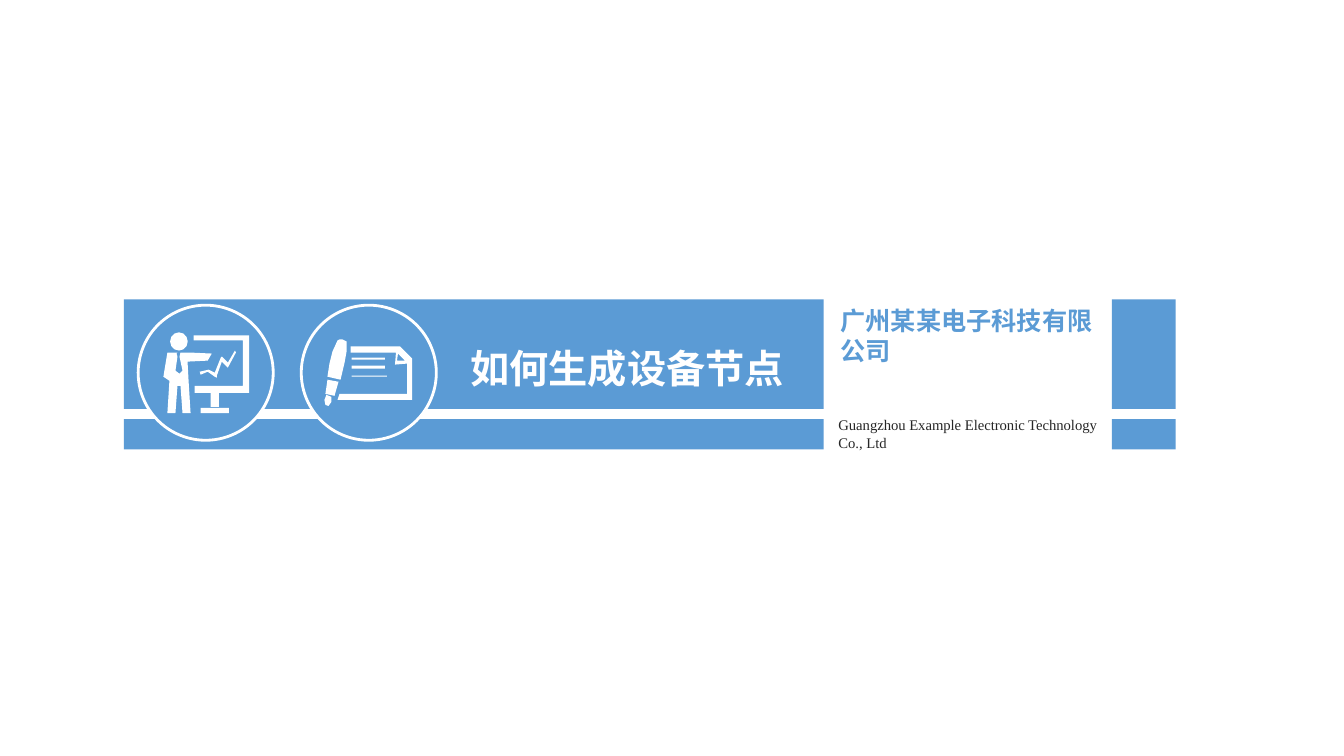
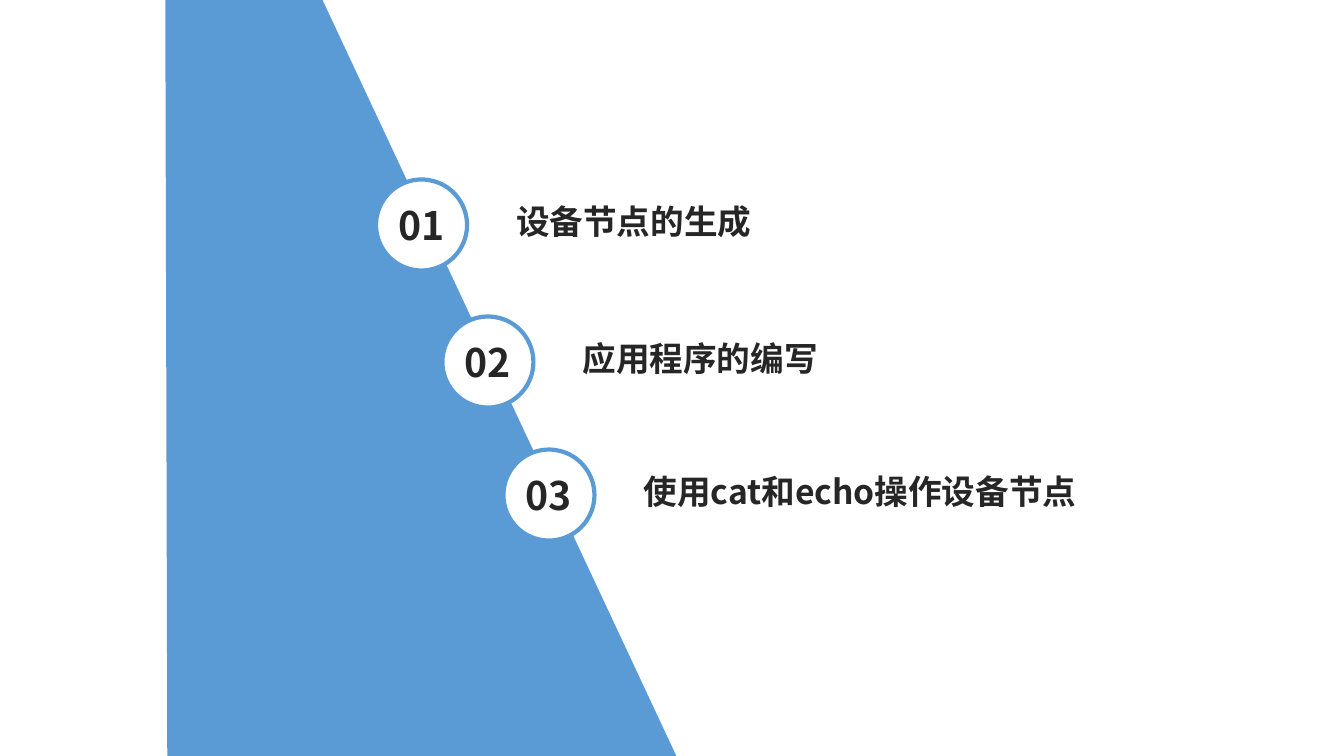
"""Build a title slide with icon bands and a three-item agenda slide."""
from lxml import etree
from pptx import Presentation
from pptx.dml.color import RGBColor
from pptx.enum.shapes import MSO_SHAPE
from pptx.enum.text import MSO_ANCHOR, PP_ALIGN
from pptx.oxml.ns import qn
from pptx.util import Pt

RECTANGLE, OVAL = MSO_SHAPE.RECTANGLE, MSO_SHAPE.OVAL
TOP = MSO_ANCHOR.TOP
LEFT, CENTER = PP_ALIGN.LEFT, PP_ALIGN.CENTER
COLORS = {
    name: RGBColor.from_string(value)
    for name, value in {"blue": "5B9BD5", "white": "FFFFFF", "ink": "262626"}.items()
}
SANS, SERIF = "Noto Sans CJK SC", "Times New Roman"
UNIT = Pt(0.72)

PRESENTER = [
    [(61, 66), (70, 64), (76, 67), (82, 52), (83, 51), (89, 57), (96, 45), (97, 47),
     (90, 60), (89, 62), (83, 56), (78, 70), (78, 72), (76, 71), (69, 66), (62, 69)],
    [(62, 102), (90, 102), (90, 107), (62, 107)],
    [(80, 87), (110, 87), (110, 30), (55, 30), (55, 35), (104, 35), (104, 80),
     (56, 80), (56, 87), (72, 87), (72, 101), (80, 101)],
    [(25, 71), (31, 75), (29, 107), (37, 107), (39, 80), (42, 80), (44, 107),
     (52, 107), (50, 75), (49, 56), (69, 55), (73, 48), (51, 47), (42, 47),
     (41, 51), (44, 65), (41, 68), (37, 65), (39, 51), (38, 48), (39, 47), (29, 47)],
]
PEN_AND_PAPER = [
    [(36, 35), (38, 34), (41, 34), (45, 36), (45, 46), (43, 57), (39, 74), (26, 71),
     (28, 58), (31, 46)],
    [(38, 88), (36, 94), (110, 94), (110, 53), (98, 41), (49, 41), (49, 47),
     (94, 47), (93, 59), (105, 58), (105, 88)],
    [(103, 55), (95, 55), (96, 48)],
    [(50, 70), (85, 70), (85, 71), (50, 71)],
    [(50, 60), (83, 60), (83, 63), (50, 63)],
    [(50, 52), (83, 52), (83, 54), (50, 54)],
    [(25, 89), (30, 91), (30, 96), (27, 100), (24, 99), (23, 94)],
    [(26, 74), (24, 88), (33, 90), (37, 76)],
]
WEDGE = [[(164, 0), (320, 0), (671, 750), (166, 750)]]


def add_figure(page, figure, left, top, width=0, height=0, fill="blue", line=None, weight=0):
    """Add a preset shape, or the outline given as a list of contours."""
    if isinstance(figure, list):
        builder = page.shapes.build_freeform(*figure[0][0], scale=UNIT)
        for index, contour in enumerate(figure):
            if index:
                builder.move_to(*contour[0])
            builder.add_line_segments(contour[1:], close=True)
        shape = builder.convert_to_shape(Pt(left), Pt(top))
    else:
        shape = page.shapes.add_shape(figure, Pt(left), Pt(top), Pt(width), Pt(height))
    shape.shadow.inherit = False
    shape.fill.solid()
    shape.fill.fore_color.rgb = COLORS[fill]
    if line:
        shape.line.color.rgb = COLORS[line]
        shape.line.width = Pt(weight)
    else:
        shape.line.fill.background()


def add_text(page, text, left, top, width, height, size, color="ink", font=SANS,
             bold=True, align=LEFT, spacing=1.0):
    """Add a wrapped text box holding one run."""
    box = page.shapes.add_textbox(Pt(left), Pt(top), Pt(width), Pt(height))
    box.text_frame.word_wrap = True
    box.text_frame.vertical_anchor = TOP
    para = box.text_frame.paragraphs[0]
    para.alignment = align
    para.line_spacing = spacing
    span = para.add_run()
    span.text = text
    span.font.size = Pt(size)
    span.font.bold = bold
    span.font.name = font
    span.font.color.rgb = COLORS[color]
    etree.SubElement(span.font._element, qn("a:ea")).set("typeface", font)


deck = Presentation()
deck.slide_width, deck.slide_height = Pt(960), Pt(540)
blank = deck.slide_layouts[6]

cover = deck.slides.add_slide(blank)
for band_left, band_width in [(88.5, 499.8), (794.2, 45.6)]:
    for band_top, band_height in [(213.8, 78.4), (299.4, 21.6)]:
        add_figure(cover, RECTANGLE, band_left, band_top, band_width, band_height)
for icon_left, icon in [(98.7, PRESENTER), (215.2, PEN_AND_PAPER)]:
    add_figure(cover, OVAL, icon_left, 218, 96.5, 96.5, line="white", weight=2)
    add_figure(cover, icon, icon_left, 218, fill="white")
add_figure(cover, OVAL, 121.5, 237.4, 12.6, 13, fill="white")
add_text(cover, "如何生成设备节点", 329, 234, 312.5, 46, 28, "white", spacing=1.25)
add_text(cover, "广州某某电子科技有限公司", 593.3, 214.6, 202.3, 51.8, 18, "blue")
add_text(cover, "Guangzhou Example Electronic Technology Co., Ltd",
         591.8, 293.8, 202.3, 33.8, 10.5, font=SERIF, bold=False)

agenda = deck.slides.add_slide(blank)
add_figure(agenda, WEDGE, 0, 0)
topics = [
    (268.6, 128.2, "设备节点的生成"),
    (316, 226.1, "应用程序的编写"),
    (359.6, 321.1, "使用cat和echo操作设备节点"),
]
for number, (left, top, topic) in enumerate(topics, start=1):
    add_figure(agenda, OVAL, left, top, 65, 65, "white", "blue", 3)
    add_text(agenda, f"{number:02}", left + 5.8, top + 12, 53.3, 43, 28, align=CENTER)
    add_text(agenda, topic, left + 93, top + 11.8, 394, 36, 24)

deck.save("out.pptx")
